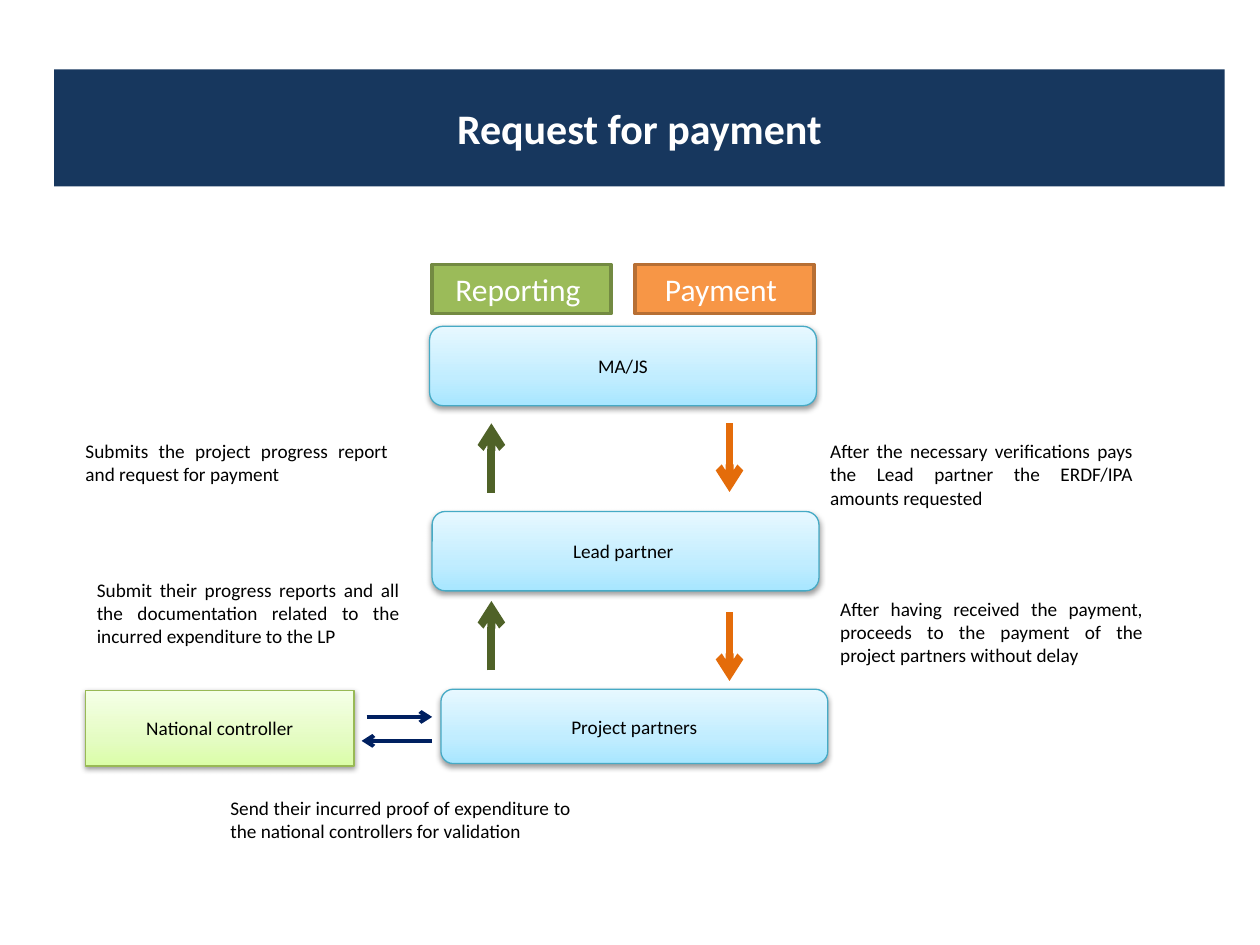
from copy import deepcopy

from pptx import Presentation
from pptx.dml.color import RGBColor
from pptx.enum.shapes import MSO_CONNECTOR as CONN, MSO_SHAPE as SHAPE
from pptx.enum.text import MSO_ANCHOR as ANCHOR, MSO_AUTO_SIZE as AUTO, PP_ALIGN as ALIGN
from pptx.oxml import parse_xml
from pptx.oxml.ns import nsdecls, qn
from pptx.oxml.xmlchemy import OxmlElement
from pptx.util import Inches, Pt

COLORS = {
    "navy": "17375E", "white": "FFFFFF", "black": "000000",
    "green": "9BBB59", "green_edge": "738A42", "green_arrow": "4F6228",
    "orange": "F79646", "orange_edge": "B76F34", "orange_arrow": "E46C0A",
    "blue_arrow": "002060", "aqua_edge": "46AAC5", "lime_edge": "98B955",
}
GRADIENTS = {
    "aqua": ("A7E6FF", "C1EDFF", "E7F8FF"),
    "lime": ("DAFDA7", "E4FCC2", "F5FFE7"),
}
STOPS = (0, 0.35, 1)
COLS, ROWS = 100, 75
SHADOW = (
    f'<a:effectLst {nsdecls("a")}><a:outerShdw blurRad="40000" dist="20000" dir="5400000" '
    'rotWithShape="0"><a:srgbClr val="000000"><a:alpha val="38000"/></a:srgbClr>'
    '</a:outerShdw></a:effectLst>'
)


def rgb(name):
    return RGBColor.from_string(COLORS[name])


class Flow:
    """Draws a payment flow on one slide, placed on a grid of COLS by ROWS."""

    font = "Calibri"
    body = 11

    def __init__(self, prs):
        self.s = prs.slides.add_slide(prs.slide_layouts[5])
        self.dx = prs.slide_width / COLS
        self.dy = prs.slide_height / ROWS

    def grid(self, x, y):
        return round(x * self.dx), round(y * self.dy)

    def put_text(self, sp, text, size, color, align=ALIGN.CENTER, bold=False):
        tf = sp.text_frame
        tf.word_wrap = True
        p = tf.paragraphs[0]
        p.alignment = align
        r = p.add_run()
        r.text = text
        r.font.name, r.font.size, r.font.bold = self.font, Pt(size), bold
        r.font.color.rgb = rgb(color)
        return tf

    def title(self, text, x, y, w, h):
        sp = self.s.shapes.title
        sp.left, sp.top = self.grid(x, y)
        sp.width, sp.height = self.grid(w, h)
        sp.fill.solid()
        sp.fill.fore_color.rgb = rgb("navy")
        tf = self.put_text(sp, text, 24, "white", bold=True)
        tf.auto_size, tf.vertical_anchor = AUTO.NONE, ANCHOR.MIDDLE

    def box(self, kind, x, y, w, h, edge, weight):
        sp = self.s.shapes.add_shape(kind, *self.grid(x, y), *self.grid(w, h))
        sp.shadow.inherit = False
        sp.line.color.rgb = rgb(edge)
        sp.line.width = Pt(weight)
        sp.text_frame.vertical_anchor = ANCHOR.MIDDLE
        return sp

    def label(self, text, x, color):
        sp = self.box(SHAPE.RECTANGLE, x, 21, 14.2, 3.9, color + "_edge", 2)
        sp.fill.solid()
        sp.fill.fore_color.rgb = rgb(color)
        self.put_text(sp, text, 18, "white")

    def actor(self, text, x, y, w, h, tint="aqua", kind=SHAPE.ROUNDED_RECTANGLE):
        sp = self.box(kind, x, y, w, h, tint + "_edge", 0.75)
        sp.fill.gradient()
        sp.fill.gradient_angle = 90
        spPr = sp._element.spPr
        stops = spPr.find(".//" + qn("a:gsLst"))
        stops.insert(1, deepcopy(stops[0]))
        for stop, pos, color in zip(sp.fill.gradient_stops, STOPS, GRADIENTS[tint]):
            stop.position = pos
            stop.color.rgb = RGBColor.from_string(color)
        spPr.replace(spPr.find(qn("a:effectLst")), parse_xml(SHADOW))
        self.put_text(sp, text, self.body, "black")

    def note(self, text, x, y, w, h):
        sp = self.s.shapes.add_textbox(*self.grid(x, y), *self.grid(w, h))
        self.put_text(sp, text, self.body, "black", ALIGN.JUSTIFY)

    def arrow(self, start, end, color, weight=4.5):
        c = self.s.shapes.add_connector(CONN.STRAIGHT, *self.grid(*start), *self.grid(*end))
        c.line.color.rgb = rgb(color + "_arrow")
        c.line.width = Pt(weight)
        tail = OxmlElement("a:tailEnd")
        tail.set("type", "arrow")
        c.line._get_or_add_ln().append(tail)
        c._element.spPr.append(OxmlElement("a:effectLst"))


def main():
    prs = Presentation()
    prs.slide_width, prs.slide_height = Inches(10), Inches(7.5)
    flow = Flow(prs)
    flow.title("Request for payment", 4.3, 5.5, 92.9, 9.3)

    flow.label("Reporting ", 34.3, "green")
    flow.label("Payment ", 50.4, "orange")

    for text, x, y, h in (
        ("MA/JS", 34.1, 25.9, 6.3),
        ("Lead partner ", 34.3, 40.6, 6.3),
        ("Project partners", 35, 54.7, 5.9),
    ):
        flow.actor(text, x, y, 30.7, h)
    flow.actor("National controller", 6.8, 54.8, 21.3, 6, "lime", SHAPE.RECTANGLE)

    for bottom in (39.1, 53.2):
        flow.arrow((39, bottom), (39, bottom - 5.5), "green")
    for top in (33.6, 48.6):
        flow.arrow((57.9, top), (57.9, top + 5.45), "orange")
    flow.arrow((29.1, 56.9), (34.3, 56.9), "blue", 2.25)
    flow.arrow((34.3, 58.8), (28.7, 58.8), "blue", 2.25)

    for text, x, y, w, h in (
        ("Submits the project progress report and request for payment ", 5.8, 34.4, 26, 4.7),
        ("Submit their progress reports and all the documentation related to the "
         "incurred expenditure to the LP", 6.7, 45.4, 26, 6.6),
        ("After the necessary verifications pays the Lead partner the ERDF/IPA "
         "amounts requested", 64.9, 34.4, 26, 6.6),
        ("After having received the payment, proceeds to the payment of the "
         "project partners without delay", 65.7, 46.9, 26, 6.6),
        ("Send their incurred proof of expenditure to the national controllers "
         "for validation ", 17.3, 62.7, 29, 4.7),
    ):
        flow.note(text, x, y, w, h)

    prs.save("out.pptx")


if __name__ == "__main__":
    main()
